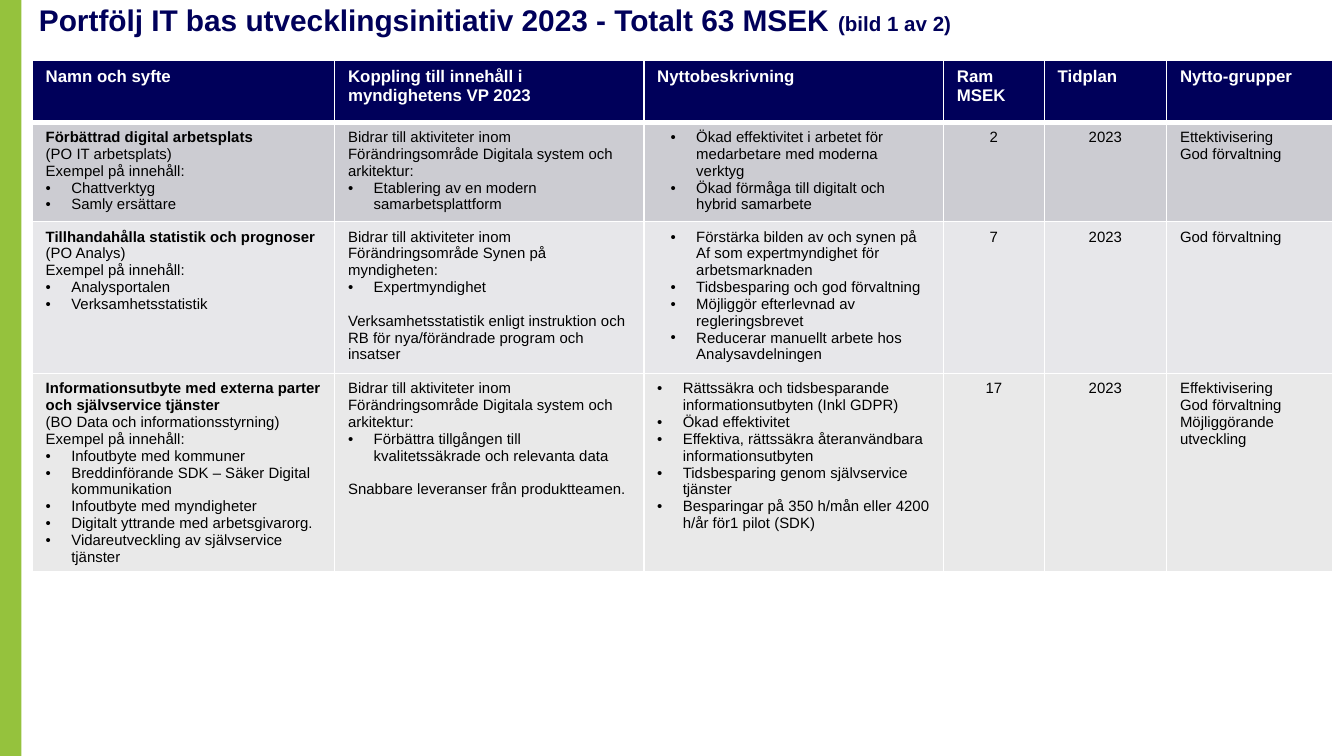
"""Build the IT portfolio slide with its table of development initiatives."""
from lxml import etree
from pptx import Presentation
from pptx.dml.color import RGBColor
from pptx.enum.shapes import MSO_SHAPE
from pptx.enum.text import MSO_ANCHOR, MSO_AUTO_SIZE, PP_ALIGN
from pptx.oxml.ns import qn
from pptx.util import Inches, Pt

RECT = MSO_SHAPE.RECTANGLE
TOP = MSO_ANCHOR.TOP
NO_FIT = MSO_AUTO_SIZE.NONE
LEFT, CENTER = PP_ALIGN.LEFT, PP_ALIGN.CENTER

BULLET = "• "
COL_WIDTHS = [2.25, 2.3, 2.23, 0.75, 0.91, 1.24]
ROW_HEIGHTS = [0.46, 0.74, 1.13, 1.13]
ROW_FILLS = ["00005A", "CCCCD2", "E7E7EA", "E9E9E9"]
HEADERS = ["Namn och syfte", "Koppling till innehåll i myndighetens VP 2023",
           "Nyttobeskrivning", "Ram MSEK", "Tidplan", "Nytto-grupper"]
INITIATIVES = [
    [
        ["Förbättrad digital arbetsplats", "(PO IT arbetsplats)", "Exempel på innehåll:",
         "• Chattverktyg", "• Samly ersättare"],
        ["Bidrar till aktiviteter inom Förändringsområde Digitala system och arkitektur:",
         "• Etablering av en modern samarbetsplattform"],
        ["• Ökad effektivitet i arbetet för medarbetare med moderna verktyg",
         "• Ökad förmåga till digitalt och hybrid samarbete"],
        ["2"], ["2023"], ["Ettektivisering", "God förvaltning"],
    ],
    [
        ["Tillhandahålla statistik och prognoser", "(PO Analys)", "Exempel på innehåll:",
         "• Analysportalen", "• Verksamhetsstatistik"],
        ["Bidrar till aktiviteter inom Förändringsområde Synen på myndigheten:",
         "• Expertmyndighet",
         "Verksamhetsstatistik enligt instruktion och RB för nya/förändrade program och insatser"],
        ["• Förstärka bilden av och synen på Af som expertmyndighet för arbetsmarknaden",
         "• Tidsbesparing och god förvaltning",
         "• Möjliggör efterlevnad av regleringsbrevet",
         "• Reducerar manuellt arbete hos Analysavdelningen"],
        ["7"], ["2023"], ["God förvaltning"],
    ],
    [
        ["Informationsutbyte med externa parter och självservice tjänster",
         "(BO Data och informationsstyrning)", "Exempel på innehåll:",
         "• Infoutbyte med kommuner",
         "• Breddinförande SDK – Säker Digital kommunikation",
         "• Infoutbyte med myndigheter",
         "• Digitalt yttrande med arbetsgivarorg.",
         "• Vidareutveckling av självservice tjänster"],
        ["Bidrar till aktiviteter inom Förändringsområde Digitala system och arkitektur:",
         "• Förbättra tillgången till kvalitetssäkrade och relevanta data",
         "Snabbare leveranser från produktteamen."],
        ["• Rättssäkra och tidsbesparande informationsutbyten (Inkl GDPR)",
         "• Ökad effektivitet",
         "• Effektiva, rättssäkra återanvändbara informationsutbyten",
         "• Tidsbesparing genom självservice tjänster",
         "• Besparingar på 350 h/mån eller 4200 h/år för1 pilot (SDK)"],
        ["17"], ["2023"],
        ["Effektivisering", "God förvaltning", "Möjliggörande utveckling"],
    ],
]


def rgb(value):
    return RGBColor.from_string(value)


def add_text(p, text, size=8, color="000000", bold=False, align=LEFT, before=0):
    p.alignment = align
    p.space_before = Pt(before)
    r = p.add_run()
    r.text = text
    r.font.name = "Arial"
    r.font.size = Pt(size)
    r.font.bold = bold
    r.font.color.rgb = rgb(color)


def add_bullet(p, margin):
    pPr = p._p.get_or_add_pPr()
    pPr.set("marL", str(Inches(margin)))
    pPr.set("indent", str(-Inches(0.19)))
    etree.SubElement(pPr, qn("a:buFont"), typeface="Arial")
    etree.SubElement(pPr, qn("a:buChar"), char=BULLET.strip())


def set_borders(cell, color, **widths):
    tcPr = cell._tc.get_or_add_tcPr()
    for side in "LRTB":
        ln = etree.SubElement(tcPr, qn(f"a:ln{side}"), w=str(Pt(widths.get(side, 1))))
        fill = etree.SubElement(ln, qn("a:solidFill"))
        etree.SubElement(fill, qn("a:srgbClr"), val=color)


class PortfolioSlide:
    navy = "00005A"
    green = "95C23D"
    white = "FFFFFF"

    def __init__(self, prs):
        self.s = prs.slides.add_slide(prs.slide_layouts[5])

    def bar(self, x, y, w, h):
        sp = self.s.shapes.add_shape(RECT, Inches(x), Inches(y), Inches(w), Inches(h))
        sp.shadow.inherit = False
        sp.fill.solid()
        sp.fill.fore_color.rgb = rgb(self.green)
        sp.line.fill.background()

    def title(self, x, y, w, h, runs):
        sp = self.s.shapes.title
        sp.left, sp.top, sp.width, sp.height = Inches(x), Inches(y), Inches(w), Inches(h)
        tf = sp.text_frame
        tf.margin_left = tf.margin_right = tf.margin_top = tf.margin_bottom = 0
        tf.vertical_anchor = TOP
        tf.auto_size = NO_FIT
        tf.word_wrap = True
        for text, size in runs:
            add_text(tf.paragraphs[0], text, size=size, color=self.navy, bold=True)

    def table(self, x, y):
        frame = self.s.shapes.add_table(
            len(ROW_HEIGHTS), len(COL_WIDTHS), Inches(x), Inches(y),
            Inches(sum(COL_WIDTHS)), Inches(sum(ROW_HEIGHTS)))
        table = frame.table
        for column, width in zip(table.columns, COL_WIDTHS):
            column.width = Inches(width)
        for row, height in zip(table.rows, ROW_HEIGHTS):
            row.height = Inches(height)
        for col, text in enumerate(HEADERS):
            cell = self.cell(table, 0, col, B=3)
            add_text(cell.text_frame.paragraphs[0], text, size=9, color=self.white, bold=True)
        for row, initiative in enumerate(INITIATIVES, 1):
            for col, lines in enumerate(initiative):
                cell = self.cell(table, row, col, T=3 if row == 1 else 1)
                self.cell_lines(cell, lines, bold_first=col == 0,
                                align=CENTER if col in (3, 4) else LEFT,
                                margin=0.29 if col == 2 and row < 3 else 0.19)

    def cell(self, table, row, col, **widths):
        cell = table.cell(row, col)
        set_borders(cell, self.white, **widths)
        cell.fill.solid()
        cell.fill.fore_color.rgb = rgb(ROW_FILLS[row])
        return cell

    def cell_lines(self, cell, lines, bold_first, align, margin):
        tf = cell.text_frame
        after_bullet = False
        for i, line in enumerate(lines):
            p = tf.add_paragraph() if i else tf.paragraphs[0]
            is_bullet = line.startswith(BULLET)
            if is_bullet:
                add_bullet(p, margin)
            add_text(p, line.removeprefix(BULLET), bold=bold_first and i == 0, align=align,
                     before=9 if after_bullet and not is_bullet else 0)
            after_bullet = is_bullet


def main():
    prs = Presentation()
    prs.slide_width = Inches(10)
    prs.slide_height = prs.slide_width * 9 // 16
    slide = PortfolioSlide(prs)
    slide.bar(0, 0, 0.16, 5.63)
    slide.table(0.24, 0.45)
    slide.title(0.29, 0.01, 9.63, 0.47, [
        ("Portfölj IT bas utvecklingsinitiativ 2023 - Totalt 63 MSEK ", 16),
        ("(bild 1 av 2)", 11)])
    prs.save("out.pptx")


if __name__ == "__main__":
    main()
